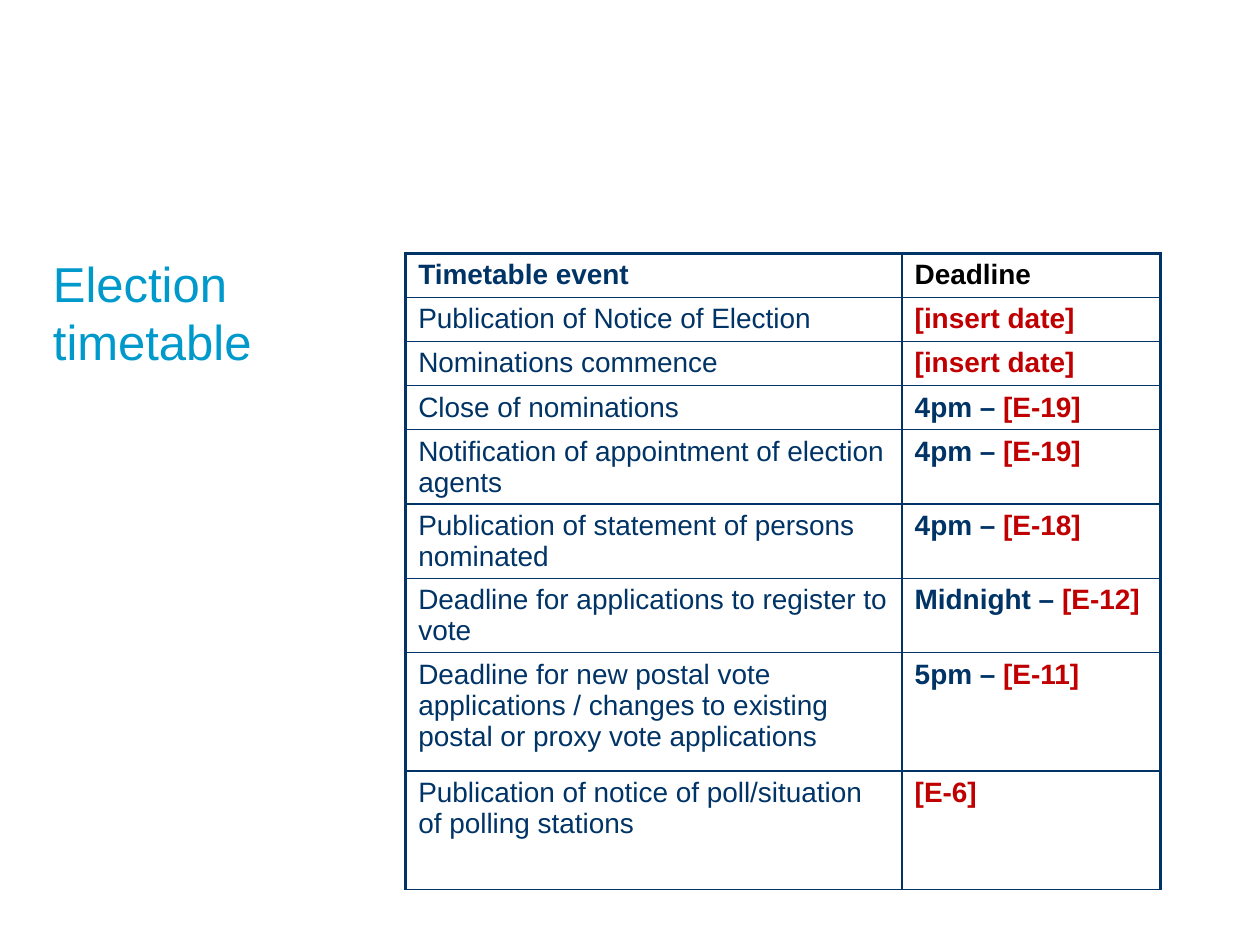
from lxml import etree
from pptx import Presentation
from pptx.dml.color import RGBColor
from pptx.enum.text import MSO_ANCHOR
from pptx.oxml.ns import qn
from pptx.util import Inches, Pt

TOP = MSO_ANCHOR.TOP
COLORS = {"title": "0099CC", "navy": "003366", "red": "C00000", "black": "000000"}
THIN, THICK = 1, 2.25
COLUMNS = [3.94, 2.05]
ROWS = [0.35] * 4 + [0.59] * 3 + [0.94] * 2
EVENTS = [
    ("Publication of Notice of Election", "", "[insert date]"),
    ("Nominations commence", "", "[insert date]"),
    ("Close of nominations", "4pm – ", "[E-19]"),
    ("Notification of appointment of election agents", "4pm – ", "[E-19]"),
    ("Publication of statement of persons nominated", "4pm – ", "[E-18]"),
    ("Deadline for applications to register to vote", "Midnight – ", "[E-12]"),
    ("Deadline for new postal vote applications / changes to existing "
     "postal or proxy vote applications", "5pm – ", "[E-11]"),
    ("Publication of notice of poll/situation of polling stations", "", "[E-6]"),
]


def add_run(p, text, color, size, bold=False):
    r = p.add_run()
    r.text = text
    for name, value in {"name": "Arial", "size": Pt(size), "bold": bold}.items():
        setattr(r.font, name, value)
    r.font.color.rgb = RGBColor.from_string(COLORS[color])


def add_title(s, left, top, width, height):
    box = s.shapes.add_textbox(*map(Inches, (left, top, width, height)))
    tf = box.text_frame
    settings = {"word_wrap": True, "vertical_anchor": TOP, "margin_left": 0,
                "margin_right": 0, "margin_top": 0, "margin_bottom": 0}
    for name, value in settings.items():
        setattr(tf, name, value)
    p = tf.paragraphs[0]
    p.line_spacing = Pt(33)
    add_run(p, "Election timetable", "title", 28)


def set_borders(cell, widths):
    tcPr = cell._tc.get_or_add_tcPr()
    for side, width in widths.items():
        ln = etree.SubElement(tcPr, qn(f"a:ln{side}"), w=str(int(Pt(width))))
        fill = etree.SubElement(ln, qn("a:solidFill"))
        etree.SubElement(fill, qn("a:srgbClr"), val=COLORS["navy"])


def fill_cell(cell, runs, borders):
    margins = {"margin_left": 0.1, "margin_right": 0.1,
               "margin_top": 0.05, "margin_bottom": 0}
    for name, value in margins.items():
        setattr(cell, name, Inches(value))
    set_borders(cell, borders)
    cell.fill.background()
    p = cell.text_frame.paragraphs[0]
    for text, color, bold in runs:
        if text:
            add_run(p, text, color, 16, bold)


def add_timetable(s, left, top):
    box = (left, top, sum(COLUMNS), sum(ROWS))
    table = s.shapes.add_table(len(ROWS), len(COLUMNS), *map(Inches, box)).table
    table.horz_banding = False
    table.first_row = False
    for column, width in zip(table.columns, COLUMNS):
        column.width = Inches(width)
    for row, height in zip(table.rows, ROWS):
        row.height = Inches(height)
    content = [([("Timetable event", "navy", True)], [("Deadline", "black", True)])]
    content += [([(event, "navy", False)], [(time, "navy", True), (date, "red", True)])
                for event, time, date in EVENTS]
    for i, row in enumerate(content):
        for j, runs in enumerate(row):
            borders = {"L": THICK if j == 0 else THIN,
                       "R": THICK if j == len(COLUMNS) - 1 else THIN,
                       "T": THICK if i == 0 else THIN,
                       "B": THIN}
            fill_cell(table.cell(i, j), runs, borders)


def main():
    prs = Presentation()
    prs.slide_width, prs.slide_height = Inches(10), Inches(7.5)
    s = prs.slides.add_slide(prs.slide_layouts[6])
    add_title(s, 0.42, 2.02, 2.75, 4.67)
    add_timetable(s, 3.22, 2.01)
    prs.save("out.pptx")


if __name__ == "__main__":
    main()
